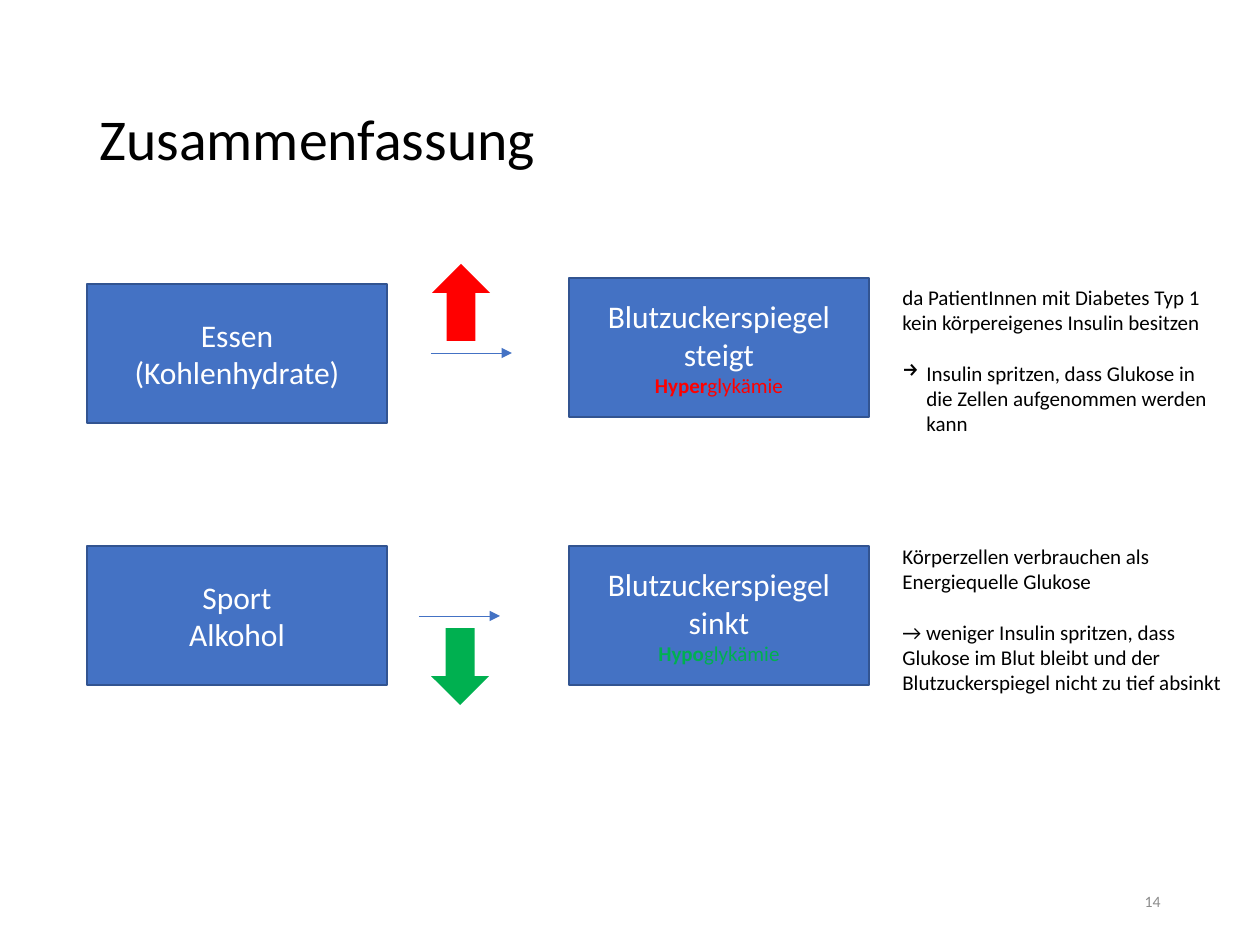
from lxml import etree
from pptx import Presentation
from pptx.dml.color import RGBColor
from pptx.enum.shapes import MSO_CONNECTOR, MSO_SHAPE
from pptx.enum.text import MSO_ANCHOR, PP_ALIGN
from pptx.oxml.ns import qn
from pptx.util import Emu, Pt

RECTANGLE, UP_ARROW = MSO_SHAPE.RECTANGLE, MSO_SHAPE.UP_ARROW
STRAIGHT = MSO_CONNECTOR.STRAIGHT
TOP, MIDDLE = MSO_ANCHOR.TOP, MSO_ANCHOR.MIDDLE
LEFT, CENTER, RIGHT = PP_ALIGN.LEFT, PP_ALIGN.CENTER, PP_ALIGN.RIGHT

EMU_PER_PX = 914400 / 126
FONT = "Calibri"
COLORS = {
    "text": "000000", "number": "8C8C8C", "white": "FFFFFF",
    "box": "4472C4", "border": "325491", "rise": "FF0000", "fall": "00B050",
}
BOX_SIZE = (300, 139)
ARROW_SIZE = (58, 77)
CAUSE_LEFT, EFFECT_LEFT, NOTE_LEFT = 87, 569, 890
NOTE_SIZE = (367, 165)
CONNECTOR_LENGTH = 81
HANGING_INDENT = 24
NOTE_GAP = 14.65

ROWS = [
    {
        "cause": ["Essen", "(Kohlenhydrate)"], "cause_top": 284,
        "effect": "Blutzuckerspiegel steigt", "effect_top": 278,
        "term": ("Hyper", "glykämie"), "color": "rise",
        "arrow": (432, 264), "rotation": 0, "connector": (431, 353),
        "note": ["da PatientInnen mit Diabetes Typ 1",
                 "kein körpereigenes Insulin besitzen"],
        "advice": "Insulin spritzen, dass Glukose in \ndie Zellen aufgenommen werden kann",
        "bullet": "→", "note_top": 278,
    },
    {
        "cause": ["Sport", "Alkohol"], "cause_top": 546,
        "effect": "Blutzuckerspiegel sinkt", "effect_top": 546,
        "term": ("Hypo", "glykämie"), "color": "fall",
        "arrow": (431, 628), "rotation": 180, "connector": (419, 616),
        "note": ["Körperzellen verbrauchen als Energiequelle Glukose"],
        "advice": "→ weniger Insulin spritzen, dass Glukose im Blut bleibt "
                  "und der Blutzuckerspiegel nicht zu tief absinkt",
        "bullet": None, "note_top": 537,
    },
]


def px(*values):
    return [Emu(round(value * EMU_PER_PX)) for value in values]


def rgb(name):
    return RGBColor.from_string(COLORS[name])


def write(shape, lines, size, color, align=LEFT, anchor=TOP):
    frame = shape.text_frame
    frame.word_wrap = True
    frame.vertical_anchor = anchor
    for index, line in enumerate(lines):
        paragraph = frame.add_paragraph() if index else frame.paragraphs[0]
        paragraph.text = line
        style(paragraph, size, color, align)
    return paragraph


def style(paragraph, size, color, align):
    paragraph.alignment = align
    paragraph.font.name = FONT
    paragraph.font.size = Pt(size)
    paragraph.font.color.rgb = rgb(color)


def add_text(slide, position, *text):
    box = slide.shapes.add_textbox(*px(*position))
    return write(box, *text)


def add_shape(slide, kind, position, fill):
    shape = slide.shapes.add_shape(kind, *px(*position))
    shape.shadow.inherit = False
    shape.fill.solid()
    shape.fill.fore_color.rgb = rgb(fill)
    shape.line.fill.background()
    return shape


def add_box(slide, left, top, lines):
    box = add_shape(slide, RECTANGLE, (left, top, *BOX_SIZE), "box")
    box.line.color.rgb = rgb("border")
    box.line.width = Pt(1)
    write(box, lines, 18, "white", CENTER, MIDDLE)
    return box


def add_connector(slide, left, top):
    connector = slide.shapes.add_connector(
        STRAIGHT, *px(left, top, left + CONNECTOR_LENGTH, top))
    connector.line.color.rgb = rgb("box")
    connector.line.width = Pt(0.5)
    etree.SubElement(connector.line._get_or_add_ln(), qn("a:tailEnd"), type="triangle")
    etree.SubElement(connector._element.spPr, qn("a:effectLst"))


def add_term(box, term, color):
    paragraph = box.text_frame.add_paragraph()
    style(paragraph, 12, color, CENTER)
    for part, bold in zip(term, (True, False)):
        run = paragraph.add_run()
        run.text = part
        run.font.bold = bold


def add_bullet(paragraph, character):
    properties = paragraph._p.get_or_add_pPr()
    indent = px(HANGING_INDENT)[0]
    properties.set("marL", str(indent))
    properties.set("indent", str(-indent))
    bullet = etree.Element(qn("a:buChar"), char=character)
    properties.find(qn("a:defRPr")).addprevious(bullet)


def add_row(slide, row):
    add_box(slide, CAUSE_LEFT, row["cause_top"], row["cause"])
    arrow = add_shape(slide, UP_ARROW, (*row["arrow"], *ARROW_SIZE), row["color"])
    arrow.rotation = row["rotation"]
    add_connector(slide, *row["connector"])
    effect = add_box(slide, EFFECT_LEFT, row["effect_top"], [row["effect"]])
    add_term(effect, row["term"], row["color"])
    advice = add_text(slide, (NOTE_LEFT, row["note_top"], *NOTE_SIZE),
                      row["note"] + [row["advice"]], 12, "text")
    advice.space_before = Pt(NOTE_GAP)
    if row["bullet"]:
        add_bullet(advice, row["bullet"])


def main():
    presentation = Presentation()
    presentation.slide_width, presentation.slide_height = px(1260, 945)
    slide = presentation.slides.add_slide(presentation.slide_layouts[6])
    title = add_text(slide, (87, 50, 1086, 183), ["Zusammenfassung"], 33, "text", LEFT, MIDDLE)
    title.line_spacing = 0.9
    add_text(slide, (890, 876, 283, 50), ["14"], 9, "number", RIGHT, MIDDLE)
    for row in ROWS:
        add_row(slide, row)
    presentation.save("out.pptx")


if __name__ == "__main__":
    main()
